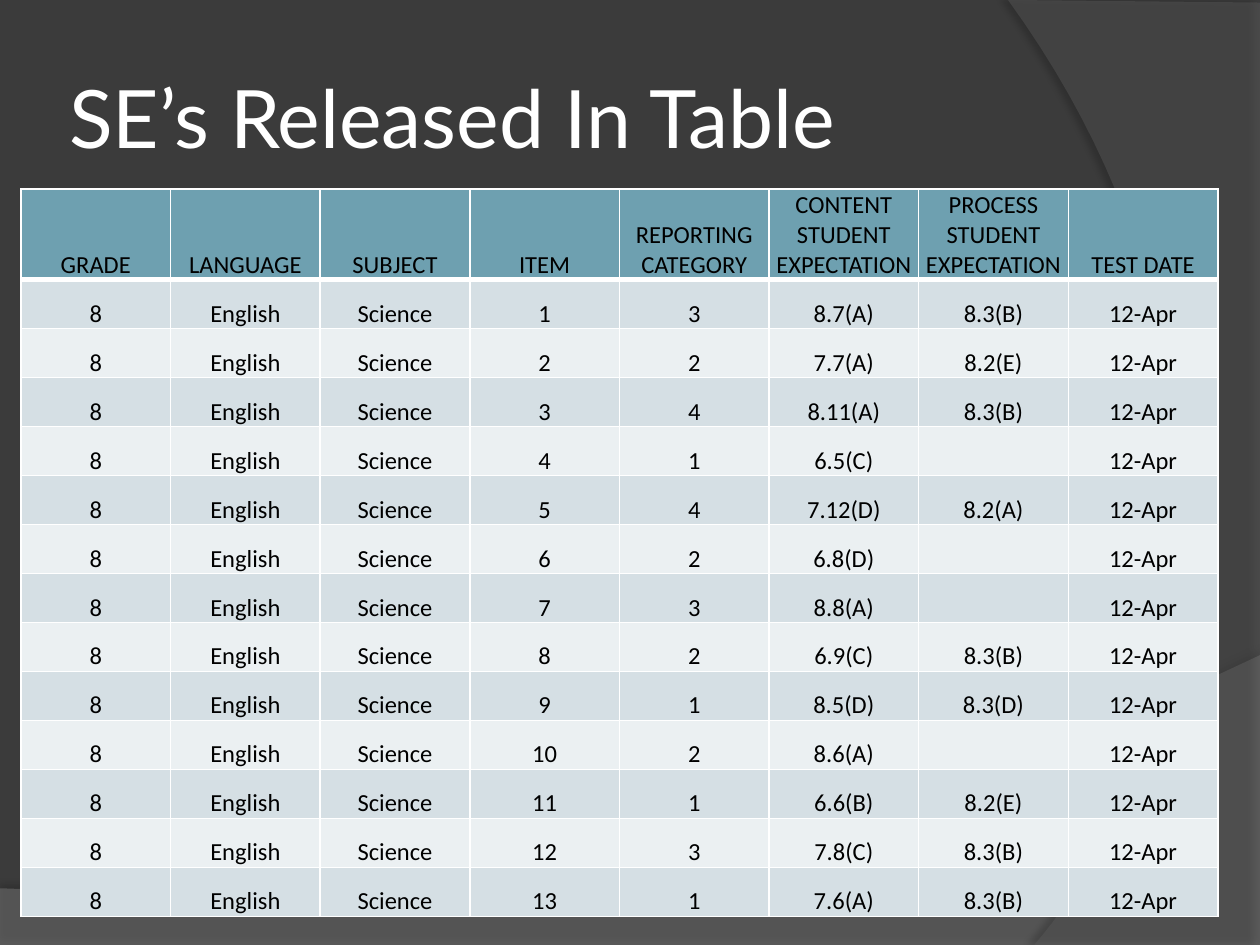
"""Build a slide with a table of released student expectations."""
from lxml.etree import SubElement
from pptx import Presentation
from pptx.dml.color import RGBColor
from pptx.enum.text import MSO_ANCHOR, PP_ALIGN
from pptx.oxml import parse_xml
from pptx.oxml.ns import nsdecls, qn
from pptx.util import Pt

TITLE = "SE’s Released In Table"
HEADINGS = ["GRADE", "LANGUAGE", "SUBJECT", "ITEM", "REPORTING CATEGORY",
            "CONTENT STUDENT EXPECTATION", "PROCESS STUDENT EXPECTATION", "TEST DATE"]
ITEMS = [
    ("3", "8.7(A)", "8.3(B)"),
    ("2", "7.7(A)", "8.2(E)"),
    ("4", "8.11(A)", "8.3(B)"),
    ("1", "6.5(C)", ""),
    ("4", "7.12(D)", "8.2(A)"),
    ("2", "6.8(D)", ""),
    ("3", "8.8(A)", ""),
    ("2", "6.9(C)", "8.3(B)"),
    ("1", "8.5(D)", "8.3(D)"),
    ("2", "8.6(A)", ""),
    ("1", "6.6(B)", "8.2(E)"),
    ("3", "7.8(C)", "8.3(B)"),
    ("1", "7.6(A)", "8.3(B)"),
]
ROWS = [HEADINGS] + [
    ["8", "English", "Science", str(number), *item, "12-Apr"]
    for number, item in enumerate(ITEMS, 1)
]
SWEEPS = [
    {"curve": [(720, 374.4), (402.5, 524.9), (281.5, 517.7), (0, 507.6)],
     "corners": [(0, 540), (720, 540)], "fill": "sweep_low", "opacity": 45,
     "shadow": {"opacity": 35, "blur": 4, "distance": 3.5, "angle": 270}},
    {"curve": [(591, 540), (673, 445.7), (733, 216), (576, 0)],
     "corners": [(720, 1.5), (720, 540)], "fill": "sweep_right", "opacity": 40,
     "shadow": {"opacity": 45, "blur": 4, "distance": 4, "angle": 180}},
]
THEME = {
    "background": "3B3B3B", "sweep_low": "7F7F7F", "sweep_right": "5E5E5E",
    "title": "FFFFFF", "text": "000000", "border": "FFFFFF", "header": "6EA0B0",
    "bands": ["D5DFE4", "EBF0F2"],
    "title_font": "Lato", "table_font": "Calibri", "title_size": 46, "table_size": 14,
}
TABLE_LEFT, TABLE_TOP, TABLE_WIDTH = 12, 108, 684
HEADER_HEIGHT, ROW_HEIGHT = 51, 28
THIN, THICK = 1, 3
CURVE_STEPS = 48


def rgb(value):
    return RGBColor.from_string(value)


def style_font(font, face, size, color):
    font.name, font.size, font.bold = face, Pt(size), False
    font.color.rgb = rgb(color)


def curve_point(curve, t):
    weights = ((1 - t) ** 3, 3 * t * (1 - t) ** 2, 3 * t * t * (1 - t), t ** 3)
    return tuple(Pt(sum(w * point[axis] for w, point in zip(weights, curve))) for axis in (0, 1))


def add_sweep(slide, sweep):
    outline = [curve_point(sweep["curve"], step / CURVE_STEPS) for step in range(CURVE_STEPS + 1)]
    outline += [(Pt(x), Pt(y)) for x, y in sweep["corners"]]
    builder = slide.shapes.build_freeform(*outline[0])
    builder.add_line_segments(outline[1:], close=True)
    shape = builder.convert_to_shape()
    shape.fill.solid()
    shape.fill.fore_color.rgb = rgb(THEME[sweep["fill"]])
    shape.line.fill.background()
    properties = shape.element.spPr
    color = properties.find(qn("a:solidFill"))[0]
    SubElement(color, qn("a:alpha"), val=str(sweep["opacity"] * 1000))
    shadow = sweep["shadow"]
    properties.append(parse_xml(
        f'<a:effectLst {nsdecls("a")}><a:outerShdw blurRad="{Pt(shadow["blur"])}" '
        f'dist="{Pt(shadow["distance"])}" dir="{shadow["angle"] * 60000}" algn="ctr" rotWithShape="0">'
        f'<a:srgbClr val="000000"><a:alpha val="{shadow["opacity"] * 1000}"/></a:srgbClr>'
        '</a:outerShdw></a:effectLst>'))


def place_title(slide):
    title = slide.shapes.title
    slide.shapes.element.append(title.element)
    title.left, title.top, title.width, title.height = Pt(36), Pt(21.6), Pt(588), Pt(90)
    frame = title.text_frame
    frame.text = TITLE
    frame.vertical_anchor = MSO_ANCHOR.MIDDLE
    frame.margin_left = frame.margin_right = frame.margin_top = frame.margin_bottom = Pt(3.6)
    paragraph = frame.paragraphs[0]
    paragraph.alignment = PP_ALIGN.LEFT
    style_font(paragraph.font, THEME["title_font"], THEME["title_size"], THEME["title"])


def set_borders(cell, row):
    widths = {"lnL": THIN, "lnR": THIN,
              "lnT": THICK if row == 1 else THIN, "lnB": THICK if row == 0 else THIN}
    properties = cell._tc.get_or_add_tcPr()
    for position, (side, width) in enumerate(widths.items()):
        properties.insert(position, parse_xml(
            f'<a:{side} {nsdecls("a")} w="{Pt(width)}"><a:solidFill>'
            f'<a:srgbClr val="{THEME["border"]}"/></a:solidFill></a:{side}>'))


def fill_cell(cell, text, row):
    cell.text = text
    cell.vertical_anchor = MSO_ANCHOR.BOTTOM
    cell.margin_left = cell.margin_right = cell.margin_top = Pt(0.75)
    cell.margin_bottom = 0
    cell.fill.solid()
    cell.fill.fore_color.rgb = rgb(THEME["bands"][(row - 1) % 2] if row else THEME["header"])
    set_borders(cell, row)
    paragraph = cell.text_frame.paragraphs[0]
    paragraph.alignment = PP_ALIGN.CENTER
    style_font(paragraph.font, THEME["table_font"], THEME["table_size"], THEME["text"])


def add_expectations(slide):
    heights = [HEADER_HEIGHT] + [ROW_HEIGHT] * len(ITEMS)
    table = slide.shapes.add_table(
        len(ROWS), len(HEADINGS), Pt(TABLE_LEFT), Pt(TABLE_TOP),
        Pt(TABLE_WIDTH), Pt(sum(heights))).table
    table.first_row = table.horz_banding = False
    for column in table.columns:
        column.width = Pt(TABLE_WIDTH / len(HEADINGS))
    for row, (texts, height) in enumerate(zip(ROWS, heights)):
        table.rows[row].height = Pt(height)
        for column, text in enumerate(texts):
            fill_cell(table.cell(row, column), text, row)


def main():
    deck = Presentation()
    deck.slide_width, deck.slide_height = Pt(720), Pt(540)
    slide = deck.slides.add_slide(deck.slide_layouts[5])
    slide.background.fill.solid()
    slide.background.fill.fore_color.rgb = rgb(THEME["background"])
    for sweep in SWEEPS:
        add_sweep(slide, sweep)
    place_title(slide)
    add_expectations(slide)
    deck.save("out.pptx")


if __name__ == "__main__":
    main()
